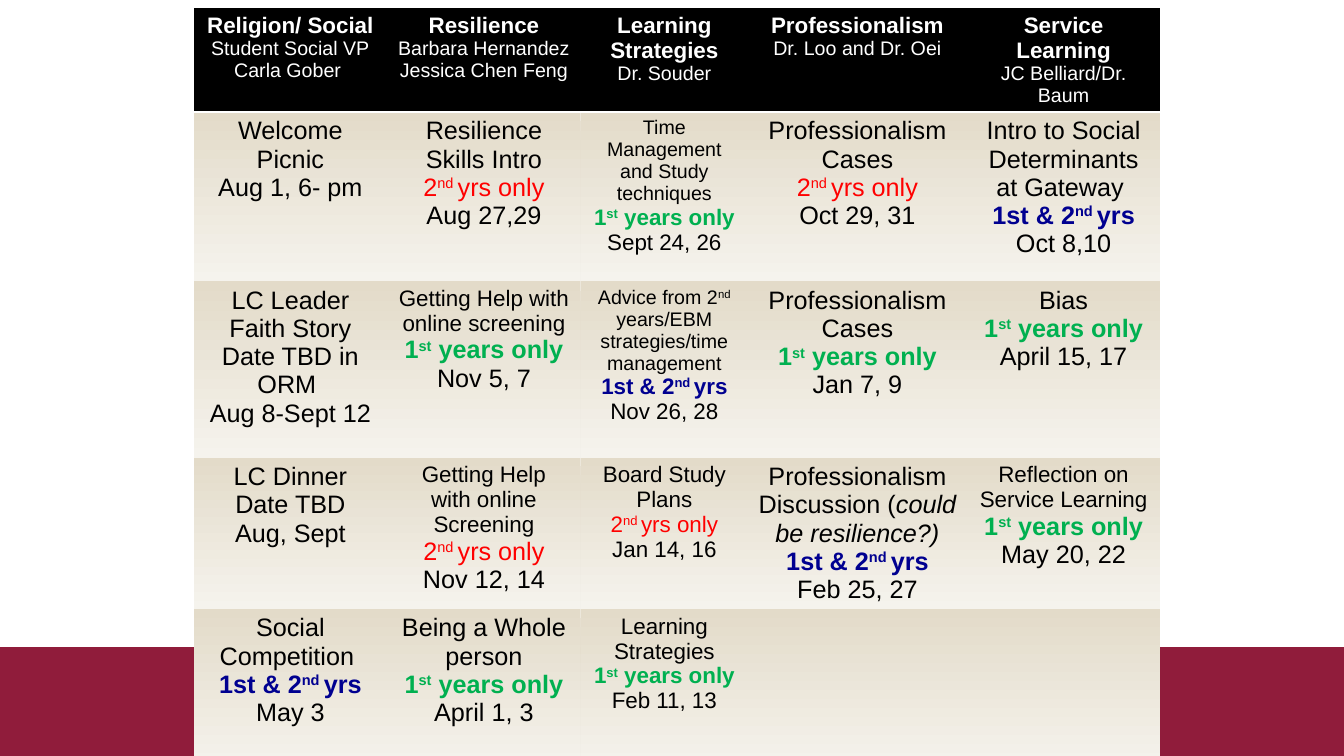
from pptx import Presentation
from pptx.dml.color import RGBColor
from pptx.enum.shapes import MSO_SHAPE
from pptx.enum.text import PP_ALIGN
from pptx.oxml import parse_xml
from pptx.oxml.ns import nsdecls, qn
from pptx.util import Inches, Pt

RECTANGLE = MSO_SHAPE.RECTANGLE
CENTER = PP_ALIGN.CENTER
FONT = "Arial"
NO_STYLE_TABLE = "{2D5ABB26-0587-4C30-8999-92F81FD0307C}"
SLIDE_WIDTH, SLIDE_HEIGHT = 13.33, 7.5
BAND_TOP = 6.42
COLUMN_WIDTHS = [1.92, 1.92, 1.66, 2.17, 1.92]
ROW_HEIGHTS = [0.83, 1.68, 1.75, 1.31, 1.61]

COLORS = {
    "band": "901C3B",
    "header": "000000",
    "white": "FFFFFF",
    "text": "000000",
    "sand": "E3DBC9",
    "cream": "F5F3ED",
    "first": "00B050",
    "second": "FF0000",
    "both": "000090",
}

# Audience: runs, bold
AUDIENCES = {
    "first": (["1", ("st", "super"), " years only"], True),
    "second": (["2", ("nd ", "super"), "yrs only"], False),
    "both": (["1st & 2", ("nd ", "super"), "yrs"], True),
}

HEADERS = [
    ["Religion/ Social", "Student Social VP", "Carla Gober "],
    ["Resilience", "Barbara Hernandez", "Jessica Chen Feng"],
    ["Learning Strategies", "Dr. Souder"],
    ["Professionalism", "Dr. Loo and Dr. Oei"],
    ["Service Learning", "JC Belliard/Dr. Baum"],
]

ADVICE = ["Advice from 2", ("nd", "super"), " years/EBM strategies/time management"]
DISCUSSION = ["Professionalism Discussion (", ("could be resilience?)", "italic")]

# Session: topic paragraphs, audience, date, topic size, date size
SESSIONS = [
    [
        (["Welcome Picnic"], None, "Aug 1, 6- pm", 18, 18),
        (["Resilience Skills Intro"], "second", "Aug 27,29", 18, 18),
        (["Time Management and Study techniques"], "first", "Sept 24, 26", 14, 16),
        (["Professionalism Cases"], "second", "Oct 29, 31", 18, 18),
        (["Intro to Social Determinants at Gateway "], "both", "Oct 8,10", 18, 18),
    ],
    [
        (["LC Leader\vFaith Story", "Date TBD in ORM "], None, "Aug 8-Sept 12", 18, 18),
        (["Getting Help with online screening"], "first", "Nov 5, 7", 16, 18),
        ([ADVICE], "both", "Nov 26, 28", 14, 16),
        (["Professionalism Cases"], "first", "Jan 7, 9", 18, 18),
        (["Bias"], "first", "April 15, 17", 18, 18),
    ],
    [
        (["LC Dinner", "Date TBD"], None, "Aug, Sept", 18, 18),
        (["Getting Help\vwith online Screening"], "second", "Nov 12, 14", 16, 18),
        (["Board Study Plans"], "second", "Jan 14, 16", 16, 16),
        ([DISCUSSION], "both", "Feb 25, 27", 18, 18),
        (["Reflection on Service Learning"], "first", "May 20, 22", 16, 18),
    ],
    [
        (["Social Competition "], "both", "May 3", 18, 18),
        (["Being a Whole person"], "first", "April 1, 3", 18, 18),
        (["Learning Strategies"], "first", "Feb 11, 13", 16, 16),
    ],
]


def rgb(name):
    return RGBColor.from_string(COLORS[name])


def add_text(paragraph, text, size=18, color="text", bold=False, style=None):
    """Add a run; a vertical tab in the text becomes a line break."""
    for index, line in enumerate(text.split("\v")):
        if index:
            paragraph.add_line_break()
        run = paragraph.add_run()
        run.text = line
        font = run.font
        font.name, font.size, font.bold = FONT, Pt(size), bold
        font.italic = style == "italic"
        font.color.rgb = rgb(color)
        if style == "super":
            run._r.get_or_add_rPr().set("baseline", "30000")


def write_cell(cell, lines):
    """Write (runs, format) lines as centred paragraphs."""
    frame = cell.text_frame
    for index, (runs, text_format) in enumerate(lines):
        paragraph = frame.add_paragraph() if index else frame.paragraphs[0]
        paragraph.alignment = CENTER
        for run in [runs] if isinstance(runs, str) else runs:
            text, style = (run, None) if isinstance(run, str) else run
            add_text(paragraph, text, style=style, **text_format)


def add_header(cell, lines):
    cell.fill.solid()
    cell.fill.fore_color.rgb = rgb("header")
    title, *leaders = lines
    write_cell(cell, [(title, dict(size=16, color="white", bold=True))]
               + [(leader, dict(size=14, color="white")) for leader in leaders])
    border = parse_xml(
        f'<a:lnB {nsdecls("a")} w="{Pt(2)}"><a:solidFill>'
        f'<a:srgbClr val="{COLORS["white"]}"/></a:solidFill></a:lnB>')
    cell._tc.get_or_add_tcPr().insert(0, border)


def shade_session(cell):
    cell.fill.gradient()
    cell.fill.gradient_angle = 270
    for stop, color in zip(cell.fill.gradient_stops, ("sand", "cream")):
        stop.color.rgb = rgb(color)


def add_session(cell, topics, audience, date, topic_size, date_size):
    lines = [(topic, dict(size=topic_size)) for topic in topics]
    if audience:
        runs, bold = AUDIENCES[audience]
        lines.append((runs, dict(size=date_size, color=audience, bold=bold)))
    lines.append((date, dict(size=date_size)))
    write_cell(cell, lines)


def add_band(slide):
    band = slide.shapes.add_shape(
        RECTANGLE, 0, Inches(BAND_TOP),
        Inches(SLIDE_WIDTH), Inches(SLIDE_HEIGHT - BAND_TOP))
    band.shadow.inherit = False
    band.fill.solid()
    band.fill.fore_color.rgb = rgb("band")
    band.line.fill.background()


def add_schedule(slide):
    frame = slide.shapes.add_table(
        len(ROW_HEIGHTS), len(COLUMN_WIDTHS), Inches(1.92), Inches(0.08),
        Inches(sum(COLUMN_WIDTHS)), Inches(sum(ROW_HEIGHTS)))
    for style_id in frame.element.iter(qn("a:tableStyleId")):
        style_id.text = NO_STYLE_TABLE
    schedule = frame.table
    for column, width in zip(schedule.columns, COLUMN_WIDTHS):
        column.width = Inches(width)
    for row, height in zip(schedule.rows, ROW_HEIGHTS):
        row.height = Inches(height)

    for column, lines in enumerate(HEADERS):
        add_header(schedule.cell(0, column), lines)
    for row in range(1, len(ROW_HEIGHTS)):
        for column in range(len(COLUMN_WIDTHS)):
            shade_session(schedule.cell(row, column))
    for row, sessions in enumerate(SESSIONS, start=1):
        for column, session in enumerate(sessions):
            add_session(schedule.cell(row, column), *session)


def main():
    presentation = Presentation()
    presentation.slide_width = Inches(SLIDE_WIDTH)
    presentation.slide_height = Inches(SLIDE_HEIGHT)
    slide = presentation.slides.add_slide(presentation.slide_layouts[6])
    add_band(slide)
    add_schedule(slide)
    presentation.save("out.pptx")


if __name__ == "__main__":
    main()
